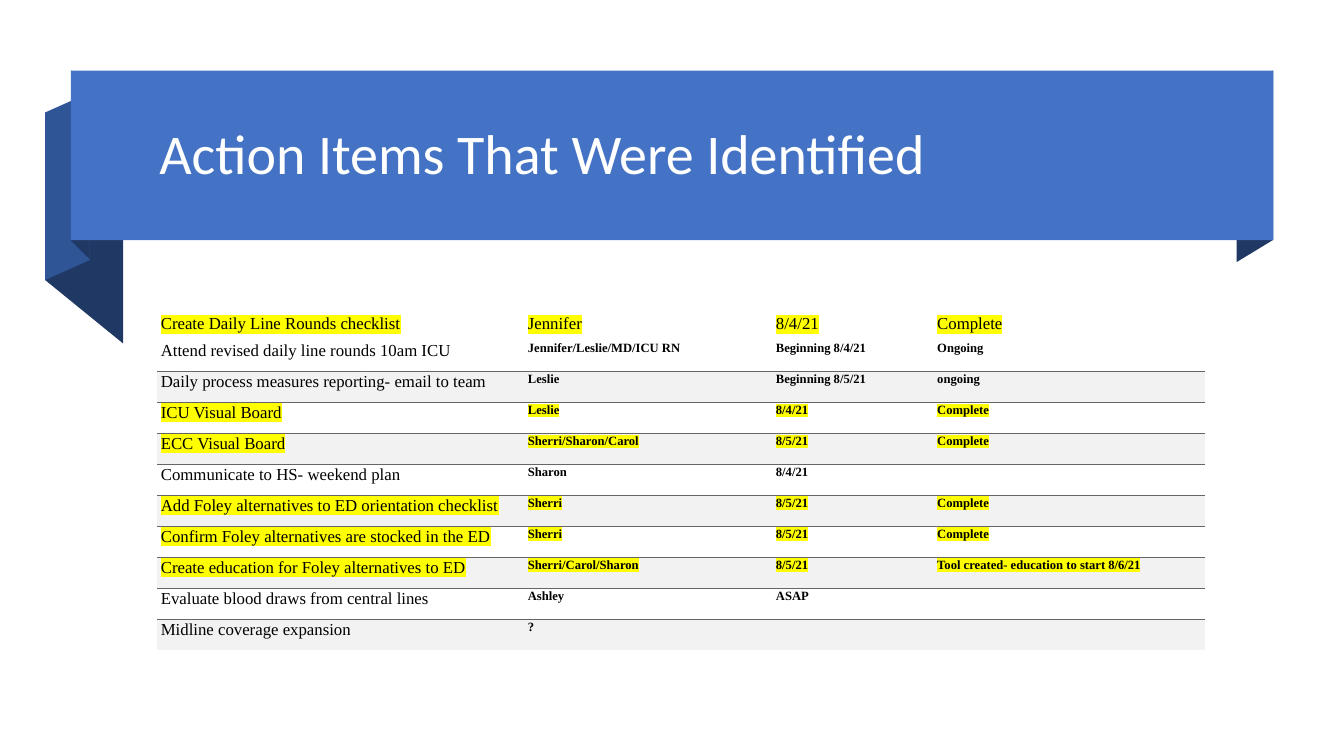
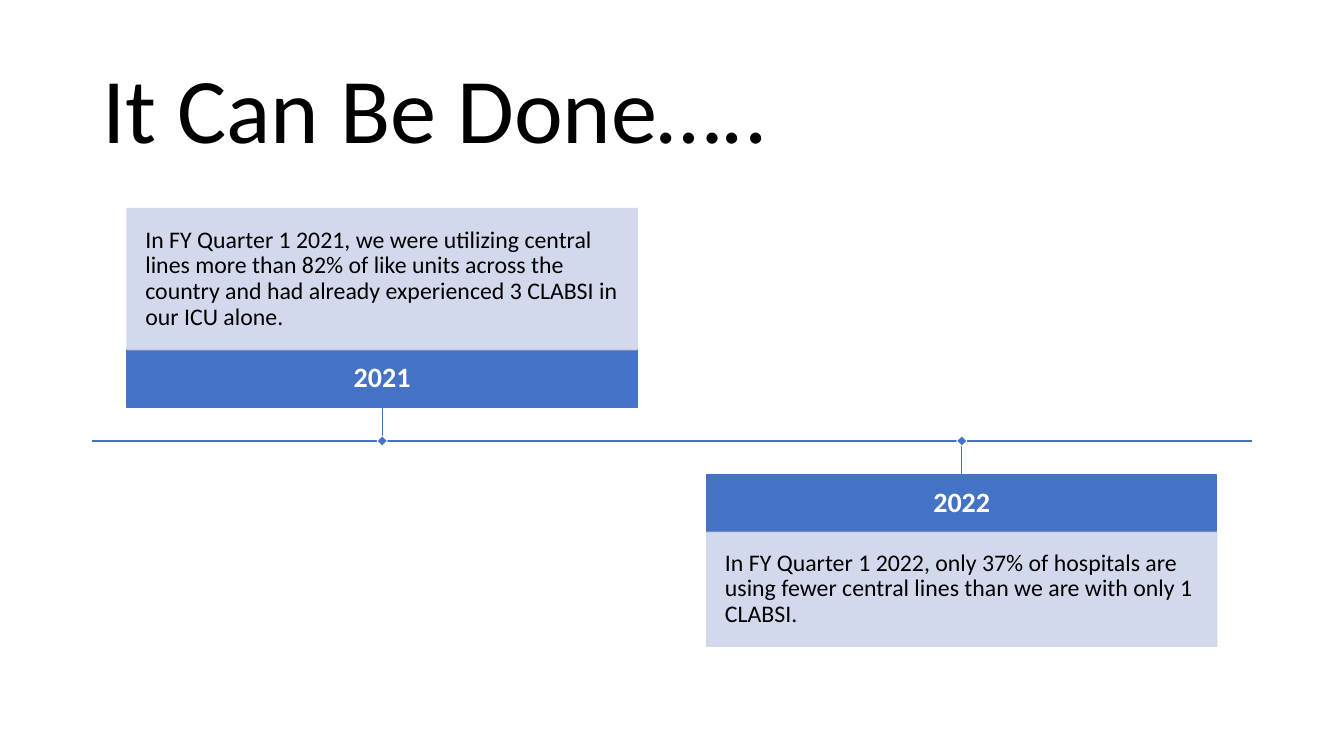
"""Build two slides: an action item table under a ribbon, and a two-year timeline."""
from lxml import etree
from pptx import Presentation
from pptx import util as u
from pptx.dml import color
from pptx.enum import shapes, text
from pptx.oxml import ns

BLUE, MID, NAVY = "4472C4", "2F5597", "203864"
PALE, BAND, RULE = "CFD5EA", "F2F2F2", "666666"
YELLOW, WHITE, BLACK = "FFFF00", "FFFFFF", "000000"
SANS, SERIF = "Calibri", "Times New Roman"

RIBBON_FOLDS = [
    (NAVY, [(909.4, 171.4), (883.4, 187.2), (883.4, 65.5), (909.4, 50.4)]),
    (NAVY, [(88, 245.4), (32.2, 200), (32.2, 80.4), (88, 126)]),
    (MID, [(64.1, 185.8), (32.2, 200), (32.2, 80.4), (64.1, 66.2)]),
    (NAVY, [(64.1, 185.2), (50.8, 172), (50.8, 50.4), (64.1, 64.1)]),
]
RIBBON = (50.6, 50.4, 859, 121.2)

COLUMNS = [262.2, 177.2, 115.2, 194.2]
ROW_HEIGHT = 22.13
ACTIONS = [
    (True, "Create Daily Line Rounds checklist", "Jennifer", "8/4/21", "Complete"),
    (False, "Attend revised daily line rounds 10am ICU", "Jennifer/Leslie/MD/ICU RN", "Beginning 8/4/21", "Ongoing"),
    (False, "Daily process measures reporting- email to team", "Leslie", "Beginning 8/5/21", "ongoing"),
    (True, "ICU Visual Board", "Leslie", "8/4/21", "Complete"),
    (True, "ECC Visual Board", "Sherri/Sharon/Carol", "8/5/21", "Complete"),
    (False, "Communicate to HS- weekend plan", "Sharon", "8/4/21", ""),
    (True, "Add Foley alternatives to ED orientation checklist", "Sherri", "8/5/21", "Complete"),
    (True, "Confirm Foley alternatives are stocked in the ED", "Sherri", "8/5/21", "Complete"),
    (True, "Create education for Foley alternatives to ED", "Sherri/Carol/Sharon", "8/5/21",
     "Tool created- education to start 8/6/21"),
    (False, "Evaluate blood draws from central lines", "Ashley", "ASAP", ""),
    (False, "Midline coverage expansion", "?", "", ""),
]

AXIS_LEFT, AXIS_WIDTH, AXIS_Y = 66, 828, 315
CARD_WIDTH, YEAR_HEIGHT, STEM, MARKER = 364.3, 41.2, 24, 5.2
YEARS = [
    ("2021", 100.8, "In FY Quarter 1 2021, we were utilizing central lines more than 82% of like units "
     "across the country and had already experienced 3 CLABSI in our ICU alone."),
    ("2022", 81.4, "In FY Quarter 1 2022, only 37% of hospitals are using fewer central lines than we are "
     "with only 1 CLABSI."),
]


def rgb(value):
    return color.RGBColor.from_string(value)


def points(*values):
    return [u.Pt(value) for value in values]


def add_span(para, words, size, ink, font=SANS, bold=False, highlight=None):
    span = para.add_run()
    span.text = words
    span.font.size, span.font.bold = u.Pt(size), bold
    span.font.color.rgb = rgb(ink)
    if highlight:
        mark = etree.SubElement(span.font._element, ns.qn("a:highlight"))
        etree.SubElement(mark, ns.qn("a:srgbClr"), val=highlight)
    span.font.name = font


def paint(shape, fill, line=None, width=1):
    shape.shadow.inherit = False
    shape.fill.solid()
    shape.fill.fore_color.rgb = rgb(fill)
    if line:
        shape.line.color.rgb = rgb(line)
        shape.line.width = u.Pt(width)
    else:
        shape.line.fill.background()


def add_box(slide, area, fill, line=None, width=1):
    box = slide.shapes.add_shape(shapes.MSO_SHAPE.RECTANGLE, *points(*area))
    paint(box, fill, line, width)
    return box


def fill_box(box, words, size, ink, inset, align, bold=False):
    frame = box.text_frame
    frame.word_wrap = True
    frame.vertical_anchor = text.MSO_ANCHOR.MIDDLE
    frame.margin_left = frame.margin_right = frame.margin_top = frame.margin_bottom = u.Pt(inset)
    para = frame.paragraphs[0]
    para.alignment, para.line_spacing = align, 0.9
    add_span(para, words, size, ink, bold=bold)


def add_line(slide, ends, width):
    line = slide.shapes.add_connector(shapes.MSO_CONNECTOR.STRAIGHT, *points(*ends))
    line.line.color.rgb = rgb(BLUE)
    line.line.width = u.Pt(width)
    etree.SubElement(line.element.spPr, ns.qn("a:effectLst"))


def set_title(slide, words, area, size, ink):
    title = slide.shapes.title
    title.left, title.top, title.width, title.height = points(*area)
    frame = title.text_frame
    frame.auto_size, frame.word_wrap = text.MSO_AUTO_SIZE.NONE, True
    frame.vertical_anchor = text.MSO_ANCHOR.MIDDLE
    para = frame.paragraphs[0]
    para.alignment, para.line_spacing = text.PP_ALIGN.LEFT, 0.9
    add_span(para, words, size, ink)
    title.element.getparent().append(title.element)


def add_ribbon(slide):
    for fill, corners in RIBBON_FOLDS:
        start, *others = [points(*corner) for corner in corners]
        builder = slide.shapes.build_freeform(*start)
        builder.add_line_segments(others, close=True)
        paint(builder.convert_to_shape(), fill)
    add_box(slide, RIBBON, BLUE)


def fill_cell(cell, words, size, bold, highlight, banded):
    cell.margin_left = cell.margin_right = u.Pt(2.6)
    cell.margin_top, cell.margin_bottom = points(0.7, 5)
    para = cell.text_frame.paragraphs[0]
    if words:
        add_span(para, words, size, BLACK, SERIF, bold, highlight)
    etree.SubElement(para._p, ns.qn("a:endParaRPr"), sz=str(size * 100))
    if not banded:
        cell.fill.background()
        return
    cell.fill.solid()
    cell.fill.fore_color.rgb = rgb(BAND)
    border = etree.Element(ns.qn("a:lnT"), w=str(u.Pt(1)))
    solid = etree.SubElement(border, ns.qn("a:solidFill"))
    etree.SubElement(solid, ns.qn("a:srgbClr"), val=RULE)
    cell._tc.get_or_add_tcPr().insert(0, border)


def add_actions(slide):
    area = points(112.3, 221.2, sum(COLUMNS), ROW_HEIGHT * len(ACTIONS))
    table = slide.shapes.add_table(len(ACTIONS), len(COLUMNS), *area).table
    table.first_row = table.horz_banding = False
    style = table._tbl.tblPr.find(ns.qn("a:tableStyleId"))
    style.text = "{2D5ABB26-0587-4C30-8999-92F81FD0307C}"
    for column, width in zip(table.columns, COLUMNS):
        column.width = u.Pt(width)
    for i, (done, *entries) in enumerate(ACTIONS):
        table.rows[i].height = u.Pt(ROW_HEIGHT)
        for j, words in enumerate(entries):
            cell = table.cell(i, j)
            large = i == 0 or j == 0
            fill_cell(cell, words, 12 if large else 9, not large,
                      YELLOW if done else None, i > 0 and i % 2 == 0)
            if i == 0:
                cell.vertical_anchor = text.MSO_ANCHOR.BOTTOM


def add_timeline(slide):
    add_line(slide, (AXIS_LEFT, AXIS_Y, AXIS_LEFT + AXIS_WIDTH, AXIS_Y), 1)
    for i, (year, note_height, note) in enumerate(YEARS):
        center = AXIS_LEFT + AXIS_WIDTH * (i + 0.5) / len(YEARS)
        left = center - CARD_WIDTH / 2
        if i % 2 == 0:
            stem_end = AXIS_Y - STEM
            year_top = stem_end - YEAR_HEIGHT
            note_top = year_top - note_height
        else:
            stem_end = year_top = AXIS_Y + STEM
            note_top = year_top + YEAR_HEIGHT
        year_box = add_box(slide, (left, year_top, CARD_WIDTH, YEAR_HEIGHT), BLUE, BLUE)
        fill_box(year_box, year, 20, WHITE, 8, text.PP_ALIGN.CENTER, True)
        note_box = add_box(slide, (left, note_top, CARD_WIDTH, note_height), PALE, PALE)
        for tint in note_box.element.spPr.iter(ns.qn("a:srgbClr")):
            etree.SubElement(tint, ns.qn("a:alpha"), val="90000")
        fill_box(note_box, note, 17, BLACK, 13, text.PP_ALIGN.LEFT)
        add_line(slide, (center, AXIS_Y, center, stem_end), 0.5)
        corner = (center - MARKER / 2, AXIS_Y - MARKER / 2)
        add_box(slide, (*corner, MARKER, MARKER), BLUE, WHITE, 0.5).rotation = 45


def main():
    deck = Presentation()
    deck.slide_width, deck.slide_height = points(960, 540)
    title_only = deck.slide_layouts[5]

    page = deck.slides.add_slide(title_only)
    add_ribbon(page)
    set_title(page, "Action Items That Were Identified", (106.6, 59.8, 787.7, 104.4), 40, WHITE)
    add_actions(page)

    page = deck.slides.add_slide(title_only)
    set_title(page, "It Can Be Done…..", (66, 28.8, 828, 104.4), 66, BLACK)
    add_timeline(page)
    deck.save("out.pptx")


if __name__ == "__main__":
    main()
